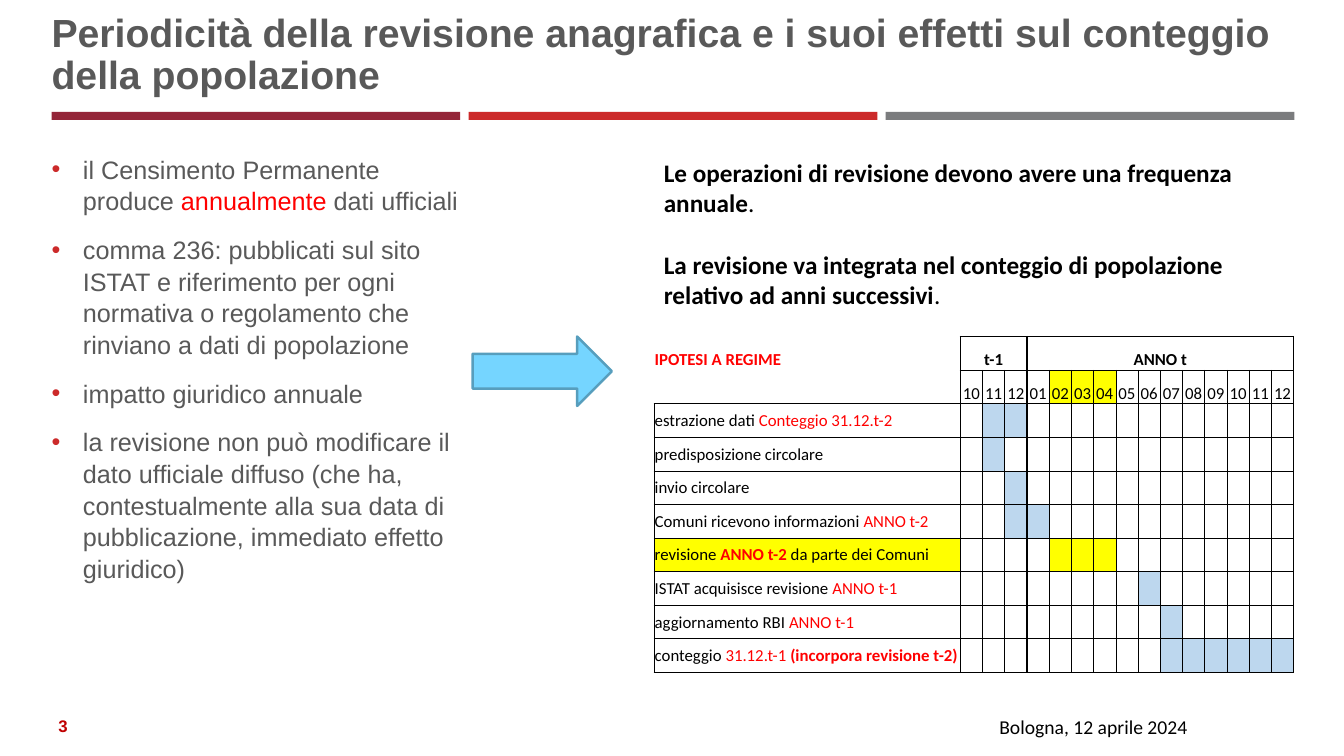
from lxml import etree
from pptx import Presentation
from pptx.dml.color import RGBColor
from pptx.enum import shapes, text
from pptx.oxml import ns
from pptx.util import Cm, Pt

BLACK = RGBColor(0x00, 0x00, 0x00)
GREY = RGBColor(0x59, 0x59, 0x59)
RED = RGBColor(0xFF, 0x00, 0x00)
DARK_RED = RGBColor(0xC0, 0x00, 0x00)
BULLET_RED = RGBColor(0xCC, 0x2A, 0x2A)
YELLOW = RGBColor(0xFF, 0xFF, 0x00)
PALE_BLUE = RGBColor(0xBD, 0xD7, 0xEE)
ARROW_FILL = RGBColor(0x75, 0xD5, 0xFF)
ARROW_LINE = RGBColor(0x57, 0x9E, 0xBD)
BAR_COLORS = (RGBColor(0x94, 0x26, 0x39), BULLET_RED, RGBColor(0x7B, 0x7C, 0x7E))
NO_GRID_STYLE = "{2D5ABB26-0587-4C30-8999-92F81FD0307C}"

TITLE = "Periodicità della revisione anagrafica e i suoi effetti sul conteggio della popolazione"
POINTS = [
    [("il Censimento Permanente produce ", GREY, False), ("annualmente", RED, False),
     (" dati ufficiali", GREY, False)],
    [("comma 236: pubblicati sul sito ISTAT e riferimento per ogni normativa "
      "o regolamento che rinviano a dati di popolazione", GREY, False)],
    [("impatto giuridico annuale", GREY, False)],
    [("la revisione non può modificare il dato ufficiale diffuso (che ha, contestualmente "
      "alla sua data di pubblicazione, immediato effetto giuridico)", GREY, False)],
]
STATEMENTS = [
    "Le operazioni di revisione devono avere una frequenza annuale",
    "La revisione va integrata nel conteggio di popolazione relativo ad anni successivi",
]
MONTHS = [10, 11, 12, *range(1, 13)]
YELLOW_MONTHS = (5, 6, 7)
ACTIVITIES = [
    ([("estrazione dati", BLACK, False), (" Conteggio 31.12.t-2", RED, False)], (2, 3)),
    ([("predisposizione circolare", BLACK, False)], (2,)),
    ([("invio circolare", BLACK, False)], (3,)),
    ([("Comuni ricevono informazioni ", BLACK, False), ("ANNO t-2", RED, False)], (3, 4)),
    ([("revisione ", BLACK, False), ("ANNO t-2 ", RED, True),
      ("da parte dei Comuni", BLACK, False)], YELLOW_MONTHS),
    ([("ISTAT acquisisce revisione ", BLACK, False), ("ANNO t-1", RED, False)], (9,)),
    ([("aggiornamento RBI ", BLACK, False), ("ANNO t-1", RED, False)], (10,)),
    ([("conteggio ", BLACK, False), ("31.12.t-1 ", RED, False),
      ("(incorpora revisione t-2)", RED, True)], range(10, 16)),
]
REVIEW_ROW = 6


def add_runs(p, runs, size, font):
    """Add (text, colour, bold) runs to a paragraph."""
    for words, color, bold in runs:
        r = p.add_run()
        r.text = words
        r.font.size, r.font.name, r.font.bold = Pt(size), font, bold
        r.font.color.rgb = color


def place(sp, box):
    """Move a shape to a box given in centimetres."""
    sp.left, sp.top, sp.width, sp.height = (Cm(v) for v in box)


def clear_margins(tf):
    """Remove the insets and the automatic fit of a text frame."""
    tf.margin_left = tf.margin_right = tf.margin_top = tf.margin_bottom = 0
    tf.auto_size, tf.word_wrap = text.MSO_AUTO_SIZE.NONE, True


def add_preset(s, kind, box, color):
    """Add a filled preset shape without outline or shadow."""
    sp = s.shapes.add_shape(kind, *(Cm(v) for v in box))
    sp.shadow.inherit = False
    sp.fill.solid()
    sp.fill.fore_color.rgb = color
    sp.line.fill.background()
    return sp


def add_label(s, box, runs, size, font, align=text.PP_ALIGN.LEFT, anchor=text.MSO_ANCHOR.TOP):
    """Add a wrapping one-paragraph text box."""
    tf = s.shapes.add_textbox(*(Cm(v) for v in box)).text_frame
    tf.word_wrap, tf.vertical_anchor = True, anchor
    p = tf.paragraphs[0]
    p.alignment = align
    add_runs(p, runs, size, font)


def add_header(s, box):
    """Fill the title and draw the three coloured bars beneath it."""
    left, top, width, height = box
    place(s.shapes.title, box)
    tf = s.shapes.title.text_frame
    clear_margins(tf)
    tf.vertical_anchor = text.MSO_ANCHOR.BOTTOM
    p = tf.paragraphs[0]
    p.alignment, p.line_spacing = text.PP_ALIGN.LEFT, Pt(30)
    add_runs(p, [(TITLE, GREY, True)], 28, "Arial")
    gap = 0.21
    bar = (width + 0.02 - 2 * gap) / 3
    for i, color in enumerate(BAR_COLORS):
        bar_box = (left + i * (bar + gap), top + height + 0.36, bar, 0.2)
        add_preset(s, shapes.MSO_SHAPE.RECTANGLE, bar_box, color)


def add_points(s, box):
    """Fill the body placeholder with the bulleted list."""
    body = s.placeholders[1]
    place(body, box)
    tf = body.text_frame
    clear_margins(tf)
    tf.vertical_anchor = text.MSO_ANCHOR.TOP
    for i, runs in enumerate(POINTS):
        p = tf.add_paragraph() if i else tf.paragraphs[0]
        pPr = p._p.get_or_add_pPr()
        pPr.set("marL", str(Cm(0.79)))
        pPr.set("indent", str(-Cm(0.79)))
        color = etree.SubElement(pPr, ns.qn("a:buClr"))
        etree.SubElement(color, ns.qn("a:srgbClr"), val=str(BULLET_RED))
        etree.SubElement(pPr, ns.qn("a:buFont"), typeface="Arial")
        etree.SubElement(pPr, ns.qn("a:buChar"), char="•")
        p.line_spacing, p.space_before, p.space_after = 1.05, Pt(0), Pt(12)
        add_runs(p, runs, 18, "Arial")


def add_statements(s, box):
    """Stack the two statements in equal steps."""
    left, top, width, height = box
    step = height / len(STATEMENTS)
    for i, words in enumerate(STATEMENTS):
        runs = [(words, BLACK, True), (".", BLACK, False)]
        add_label(s, (left, top + i * step, width, 1.8), runs, 18, "Calibri")


def add_arrow(s, box):
    """Draw the outlined arrow from the list to the schedule."""
    arrow = add_preset(s, shapes.MSO_SHAPE.RIGHT_ARROW, box, ARROW_FILL)
    arrow.line.color.rgb = ARROW_LINE
    arrow.line.width = Pt(1.75)


def border_widths(row, col):
    """Return the left, right, top and bottom border widths in points."""
    if col == 0 and row < 2:
        return 0, 1, 0, 0.5 * row
    return (1 if col in (1, 4) else 0.5, 1 if col in (0, 3, 15) else 0.5,
            1 if row == 0 else 0.5, 1 if row == 9 and col else 0.5)


def format_cell(cell, widths, color):
    """Set margins, borders and fill of a schedule cell."""
    cell.margin_left = cell.margin_right = cell.margin_top = Cm(0.02)
    cell.margin_bottom = 0
    tcPr = cell._tc.get_or_add_tcPr()
    for side, width in zip("LRTB", widths):
        ln = etree.SubElement(tcPr, ns.qn(f"a:ln{side}"), w=str(Pt(width)))
        if width:
            fill = etree.SubElement(ln, ns.qn("a:solidFill"))
            etree.SubElement(fill, ns.qn("a:srgbClr"), val=str(BLACK))
        else:
            etree.SubElement(ln, ns.qn("a:noFill"))
    if color is None:
        cell.fill.background()
    else:
        cell.fill.solid()
        cell.fill.fore_color.rgb = color


def fill_cell(cell, runs, align, anchor):
    """Write runs into a schedule cell."""
    cell.vertical_anchor = anchor
    p = cell.text_frame.paragraphs[0]
    p.alignment = align
    add_runs(p, runs, 12, "Calibri")


def add_schedule(s, box):
    """Build the month-by-month schedule table."""
    rows, cols = len(ACTIVITIES) + 2, len(MONTHS) + 1
    table = s.shapes.add_table(rows, cols, *(Cm(v) for v in box)).table
    table.first_row = table.horz_banding = False
    table._tbl.tblPr.find(ns.qn("a:tableStyleId")).text = NO_GRID_STYLE
    month_width = 0.56
    for col in range(cols):
        table.columns[col].width = Cm(month_width if col else box[2] - month_width * len(MONTHS))
    colors = {(1, col): YELLOW for col in YELLOW_MONTHS}
    colors[REVIEW_ROW, 0] = YELLOW
    for row, (_, active) in enumerate(ACTIVITIES, 2):
        colors.update({(row, col): YELLOW if row == REVIEW_ROW else PALE_BLUE for col in active})
    for row in range(rows):
        table.rows[row].height = Cm(box[3] / rows)
        for col in range(cols):
            format_cell(table.cell(row, col), border_widths(row, col), colors.get((row, col)))
    left, center = text.PP_ALIGN.LEFT, text.PP_ALIGN.CENTER
    bottom, middle = text.MSO_ANCHOR.BOTTOM, text.MSO_ANCHOR.MIDDLE
    fill_cell(table.cell(0, 0), [("IPOTESI A REGIME", RED, True)], left, bottom)
    for words, first, last in (("t-1", 1, 3), ("ANNO t", 4, 15)):
        table.cell(0, first).merge(table.cell(0, last))
        fill_cell(table.cell(0, first), [(words, BLACK, True)], center, bottom)
    for col, month in enumerate(MONTHS, 1):
        fill_cell(table.cell(1, col), [(f"{month:02}", BLACK, False)], center, bottom)
    for row, (runs, _) in enumerate(ACTIVITIES, 2):
        fill_cell(table.cell(row, 0), runs, left, middle)


def add_footer(s, box):
    """Place the slide number and the place and date."""
    left, top, width, height = box
    add_label(s, (left, top, 1.4, height), [("3", DARK_RED, True)], 12, "Arial",
              text.PP_ALIGN.CENTER, text.MSO_ANCHOR.MIDDLE)
    add_label(s, (left + width - 17.32, top + 0.1, 17.32, 0.86),
              [("Bologna, 12 aprile 2024", BLACK, False)], 14, "Calibri", text.PP_ALIGN.RIGHT)


def main():
    """Build and save the slide."""
    prs = Presentation()
    prs.slide_width, prs.slide_height = Cm(33.87), Cm(19.05)
    s = prs.slides.add_slide(prs.slide_layouts[1])
    add_header(s, (1.3, 0.33, 31.3, 2.13))
    add_points(s, (1.3, 3.84, 10.26, 11.81))
    add_statements(s, (16.48, 3.84, 15.65, 4.62))
    add_arrow(s, (11.91, 8.48, 3.51, 1.75))
    add_schedule(s, (16.48, 8.48, 16.12, 8.46))
    add_footer(s, (0.89, 17.78, 29.29, 1.02))
    prs.save("out.pptx")


if __name__ == "__main__":
    main()
